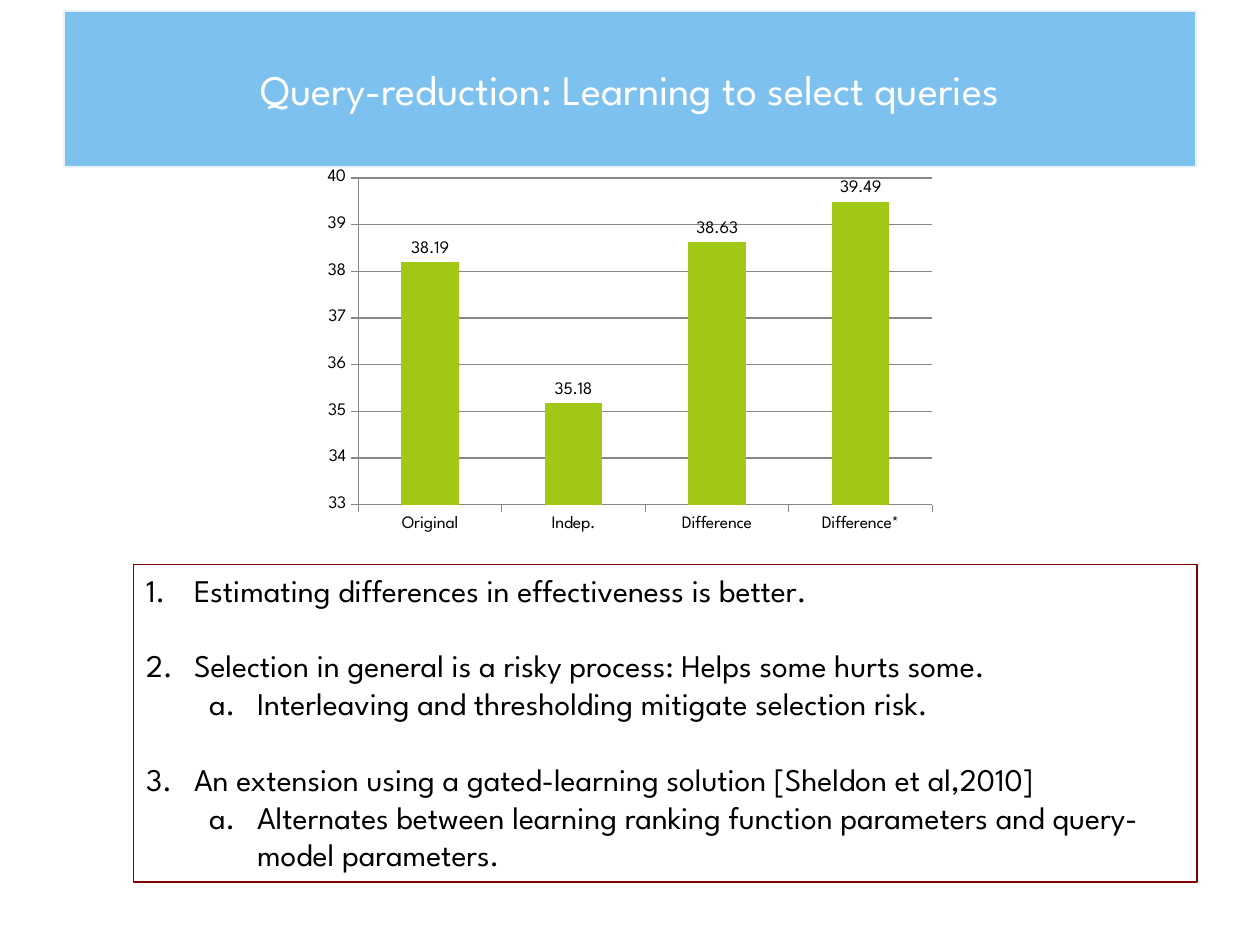
from pptx import Presentation
from pptx import util as u
from pptx.chart import data
from pptx.dml import color
from pptx.enum import chart as ch, text
from lxml import etree

FONT = "League Spartan"
NS = "{http://schemas.openxmlformats.org/drawingml/2006/main}"


def rgb(h):
    return color.RGBColor.from_string(h)


def set_font(f, size, hex_color):
    f.name = FONT
    f.size = u.Pt(size)
    f.color.rgb = rgb(hex_color)


prs = Presentation()
prs.slide_width, prs.slide_height = u.Inches(10), u.Inches(7.5)
s = prs.slides.add_slide(prs.slide_layouts[1])

title = s.shapes.title
title.left, title.top = u.Inches(0.5), u.Inches(0.08)
title.width, title.height = u.Inches(9), u.Inches(1.25)
title.fill.solid()
title.fill.fore_color.rgb = rgb("7DC1EF")
title.line.color.rgb = rgb("FFFFFF")
title.line.width = u.Pt(2)
clr = title.line._ln.find(f".//{NS}srgbClr")
etree.SubElement(clr, NS + "alpha", val="80000")
tf = title.text_frame
tf.text = "Query-reduction: Learning to select queries"
tf.auto_size = text.MSO_AUTO_SIZE.NONE
tf.vertical_anchor = text.MSO_ANCHOR.MIDDLE
p = tf.paragraphs[0]
p.alignment = text.PP_ALIGN.CENTER
set_font(p.font, 24, "FFFFFF")

items = [
    (0, 1, "Estimating differences in effectiveness is better."),
    (0, 2, "Selection in general is a risky process: Helps some hurts some."),
    (1, 1, "Interleaving and thresholding mitigate selection risk."),
    (0, 3, "An extension using a gated-learning solution [Sheldon et al,2010]"),
    (1, 1, "Alternates between learning ranking function parameters and query-model parameters."),
]
body = s.placeholders[1]
body.left, body.top = u.Inches(1.06), u.Inches(4.48)
body.width, body.height = u.Inches(8.44), u.Inches(2.52)
body.line.color.rgb = rgb("800000")
body.line.width = u.Pt(0.75)
tf = body.text_frame
tf.word_wrap = True
tf.auto_size = text.MSO_AUTO_SIZE.NONE
tf.vertical_anchor = text.MSO_ANCHOR.TOP
for i, (level, number, words) in enumerate(items):
    p = tf.add_paragraph() if i else tf.paragraphs[0]
    p.text = words
    p.level = level
    p.space_before = u.Pt(21.6 if i and level == 0 else 0)
    set_font(p.font, 18, "000000")
    pPr = p._p.get_or_add_pPr()
    pPr.set("marL", str(u.Inches(0.38 + 0.5 * level)))
    pPr.set("indent", str(u.Inches(-0.38)))
    bullet = etree.Element(NS + "buAutoNum", startAt=str(number),
                           type=("arabicPeriod", "alphaLcPeriod")[level])
    pPr.find(NS + "defRPr").addprevious(bullet)

cd = data.CategoryChartData(number_format="0.00")
cd.categories = ["Original", "Indep.", "Difference", "Difference*"]
cd.add_series("Series 1", [38.19, 35.18, 38.63, 39.49])
chart = s.shapes.add_chart(ch.XL_CHART_TYPE.COLUMN_CLUSTERED, u.Inches(2.5),
                           u.Inches(1.29), u.Inches(5), u.Inches(3), cd).chart
chart.has_legend = False
chart.has_title = False
set_font(chart.font, 10, "000000")
plot = chart.plots[0]
plot.gap_width = 150
plot.vary_by_categories = False
plot.has_data_labels = True
plot.data_labels.show_value = True
plot.data_labels.position = ch.XL_LABEL_POSITION.OUTSIDE_END
fill = plot.series[0].format.fill
fill.solid()
fill.fore_color.rgb = rgb("A2C816")

val = chart.value_axis
val.minimum_scale, val.maximum_scale, val.major_unit = 33, 40, 1
val.has_major_gridlines = True
val.major_gridlines.format.line.color.rgb = rgb("878787")
val.tick_labels.number_format = "0"
val.tick_labels.number_format_is_linked = False
for axis in (val, chart.category_axis):
    axis.major_tick_mark = ch.XL_TICK_MARK.OUTSIDE
    axis.format.line.color.rgb = rgb("878787")

prs.save("out.pptx")
